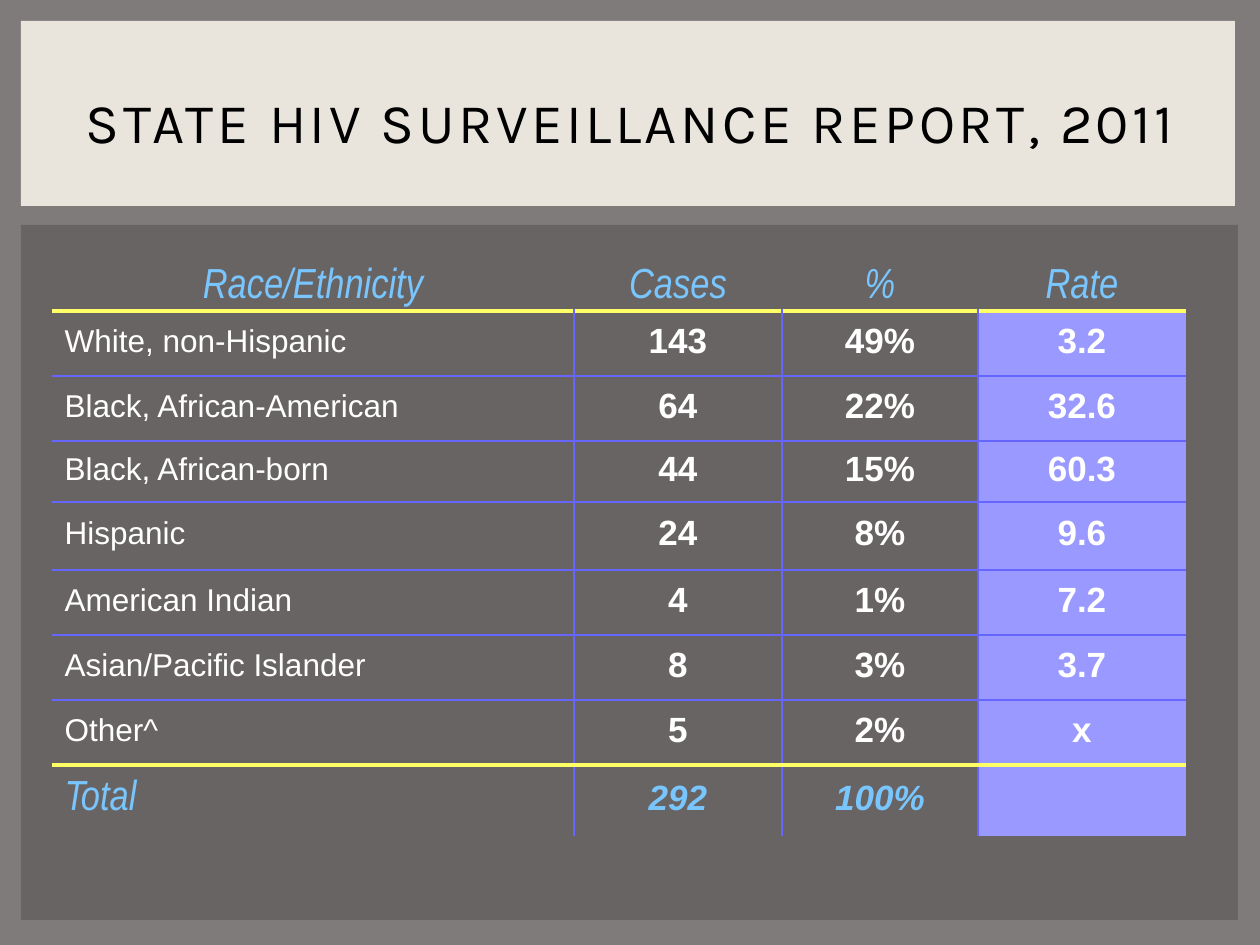
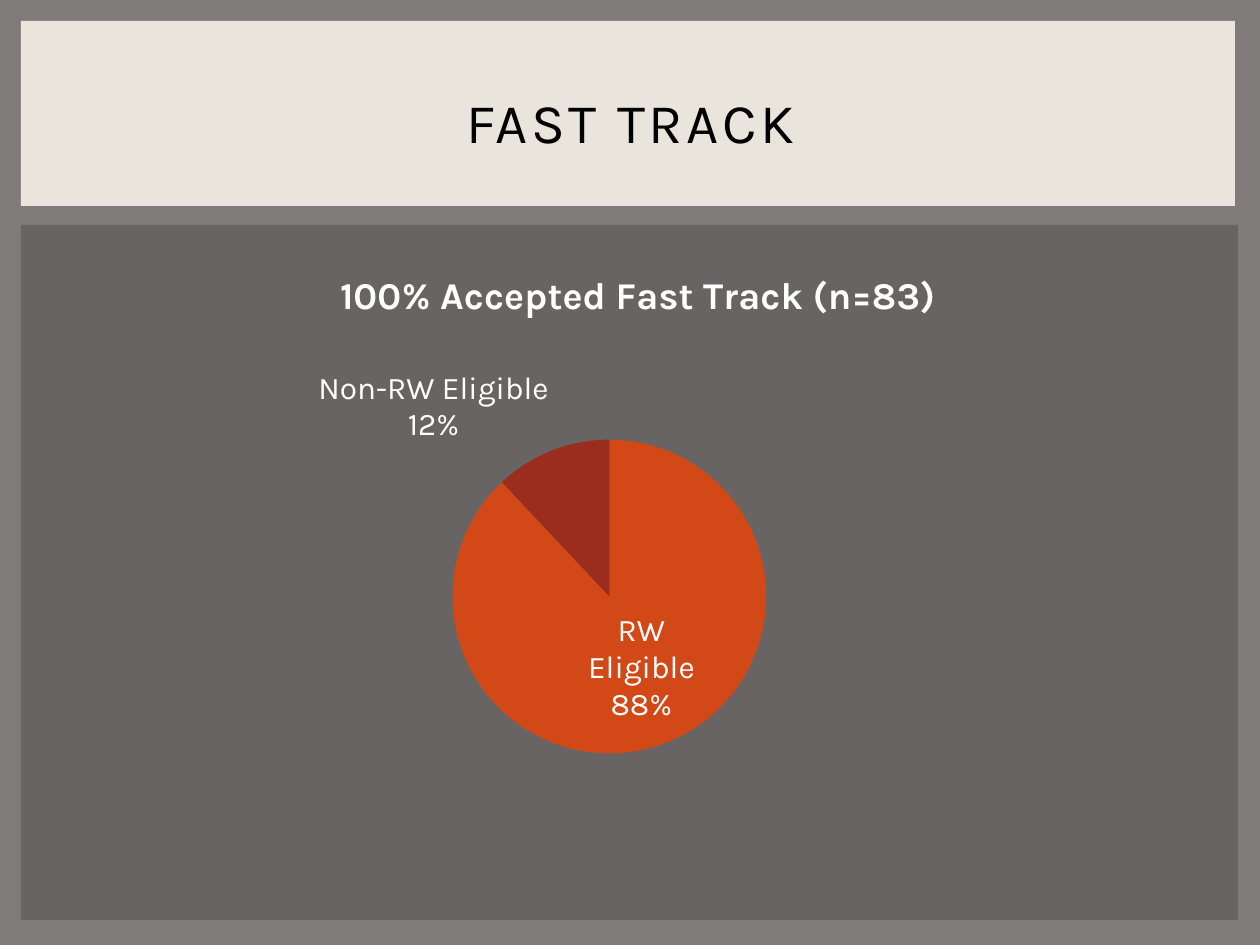
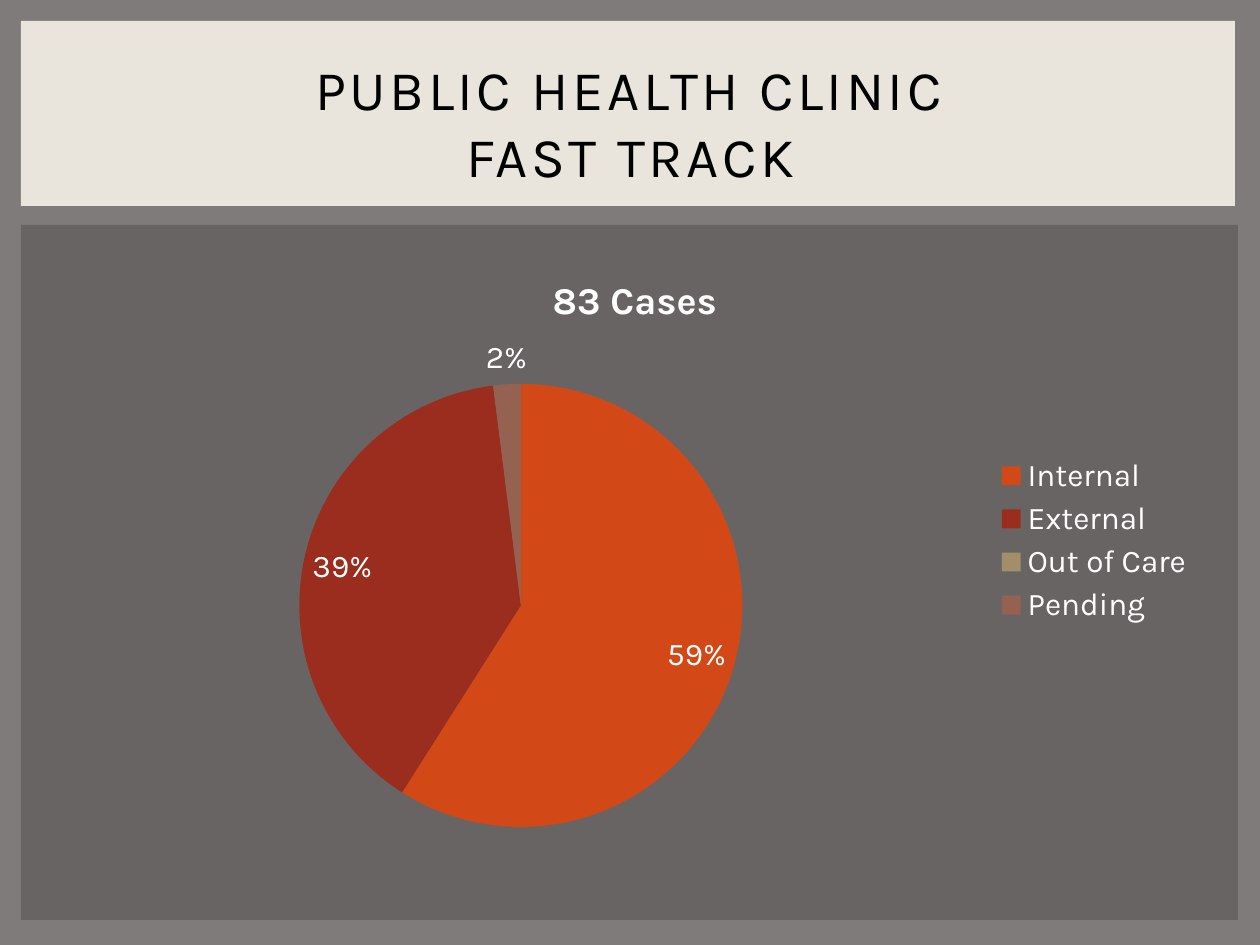
from lxml.etree import SubElement
from pptx import Presentation
from pptx.chart.data import CategoryChartData
from pptx.dml.color import RGBColor
from pptx.enum.chart import XL_CHART_TYPE, XL_LABEL_POSITION, XL_LEGEND_POSITION
from pptx.enum.shapes import MSO_SHAPE
from pptx.enum.text import MSO_ANCHOR, MSO_AUTO_SIZE, PP_ALIGN
from pptx.oxml.ns import qn
from pptx.util import Inches, Pt

PX = Inches(1) / 126
COLORS = {
    "background": "807B7B",
    "panel": "696464",
    "title_band": "E9E5DC",
    "title": "000000",
    "text": "FFFFFF",
    "heading": "79C6FF",
    "rate_fill": "9999FF",
    "grid": "6666FF",
    "rule": "FFFF66",
}
SLICES = ["D34817", "9B2D1F", "A28E6A", "956251"]
BANDS = [((21, 225, 1217, 695), "panel"), ((21, 21, 1214, 185), "title_band")]
TITLE_BOX = (53, 49, 1155, 145)
CHART_TOP, CHART_WIDTH, CHART_HEIGHT = 237, 1158, 607

COLUMN_WIDTHS = [522, 208, 196, 208]
ROW_HEIGHTS = [46, 65, 65, 61, 68, 65, 65, 65, 71]
SURVEILLANCE = [
    ("Race/Ethnicity", "Cases", "%", "Rate"),
    ("White, non-Hispanic", "143", "49%", "3.2"),
    ("Black, African-American", "64", "22%", "32.6"),
    ("Black, African-born", "44", "15%", "60.3"),
    ("Hispanic", "24", "8%", "9.6"),
    ("American Indian", "4", "1%", "7.2"),
    ("Asian/Pacific Islander", "8", "3%", "3.7"),
    ("Other^", "5", "2%", "x"),
    ("Total", "292", "100%", ""),
]


def emu(*lengths):
    return [round(length * PX) for length in lengths]


def rgb(name):
    return RGBColor.from_string(COLORS[name])


def style_font(font, face, size, color, bold=False, italic=False):
    font.name, font.size = face, Pt(size)
    font.color.rgb = rgb(color)
    font.bold, font.italic = bold, italic


def add_titled_slide(prs, title_text):
    slide = prs.slides.add_slide(prs.slide_layouts[5])
    title = slide.shapes.title
    title.left, title.top, title.width, title.height = emu(*TITLE_BOX)
    frame = title.text_frame
    frame.text = title_text
    frame.word_wrap = True
    frame.auto_size = MSO_AUTO_SIZE.NONE
    frame.vertical_anchor = MSO_ANCHOR.MIDDLE
    frame.paragraphs[0].alignment = PP_ALIGN.CENTER
    for run in frame.paragraphs[0].runs:
        style_font(run.font, "Karla", 32, "title")
        run.font._element.set("spc", "200")
    for box, color in BANDS:
        band = slide.shapes.add_shape(MSO_SHAPE.RECTANGLE, *emu(*box))
        band.shadow.inherit = False
        band.fill.solid()
        band.fill.fore_color.rgb = rgb(color)
        band.line.fill.background()
        title._element.addprevious(band._element)
    return slide


def set_borders(cell, sides):
    """Draw the given sides as (colour, points) and hide those set to None."""
    properties = cell._tc.get_or_add_tcPr()
    for side in "LRTB":
        line = SubElement(properties, qn(f"a:ln{side}"))
        if sides[side] is None:
            SubElement(line, qn("a:noFill"))
            continue
        color, points = sides[side]
        line.set("w", str(Pt(points)))
        fill = SubElement(line, qn("a:solidFill"))
        SubElement(fill, qn("a:srgbClr"), val=COLORS[color])


def cell_borders(row, column):
    last_row, last_column = len(SURVEILLANCE) - 1, len(COLUMN_WIDTHS) - 1
    grid, rule = ("grid", 1), ("rule", 2.25)

    def edge_below(index):
        if index in (-1, last_row):
            return None
        return rule if index in (0, last_row - 1) else grid

    return {
        "L": grid if row and column else None,
        "R": grid if row and column < last_column else None,
        "T": edge_below(row - 1),
        "B": edge_below(row),
    }


def cell_style(row, column):
    if row == 0 or (row == len(SURVEILLANCE) - 1 and column == 0):
        return "Arial Narrow", 24, "heading", False, True
    if row == len(SURVEILLANCE) - 1:
        return "Arial", 20, "heading", True, True
    return ("Arial", 20, "text", True) if column else ("Arial", 18, "text")


def fill_cell(cell, text, row, column):
    set_borders(cell, cell_borders(row, column))
    if row and column == len(COLUMN_WIDTHS) - 1:
        cell.fill.solid()
        cell.fill.fore_color.rgb = rgb("rate_fill")
    else:
        cell.fill.background()
    cell.vertical_anchor = MSO_ANCHOR.MIDDLE
    if row == 0:
        cell.margin_top = cell.margin_bottom = 0
    cell.text_frame.text = text
    paragraph = cell.text_frame.paragraphs[0]
    paragraph.alignment = PP_ALIGN.LEFT if row and not column else PP_ALIGN.CENTER
    paragraph.line_spacing = 0.85
    style = cell_style(row, column)
    paragraph.space_after = Pt(style[1] / 4)
    for run in paragraph.runs:
        style_font(run.font, *style)


def add_surveillance_table(slide):
    box = emu(52, 265, sum(COLUMN_WIDTHS), sum(ROW_HEIGHTS))
    table = slide.shapes.add_table(len(ROW_HEIGHTS), len(COLUMN_WIDTHS), *box).table
    table.first_row = table.horz_banding = False
    for column, width in zip(table.columns, emu(*COLUMN_WIDTHS)):
        column.width = width
    for row, height in zip(table.rows, emu(*ROW_HEIGHTS)):
        row.height = height
    for r, record in enumerate(SURVEILLANCE):
        for c, text in enumerate(record):
            fill_cell(table.cell(r, c), text, r, c)


def place_in_chart(element, fractions, inner=False):
    """Give a chart part a manual layout in fractions of the chart's size."""
    layout = element.find(qn("c:layout"))
    if layout is None:
        layout = element.makeelement(qn("c:layout"))
        text = element.find(qn("c:tx"))
        if text is None:
            element.insert(0, layout)
        else:
            text.addnext(layout)
    manual = SubElement(layout, qn("c:manualLayout"))
    if inner:
        SubElement(manual, qn("c:layoutTarget"), val="inner")
    for axis in "xy":
        SubElement(manual, qn(f"c:{axis}Mode"), val="edge")
    for name, fraction in zip("xywh", fractions):
        SubElement(manual, qn(f"c:{name}"), val=f"{fraction:.3f}")


def add_pie(slide, left, title, title_at, shares, circle, with_legend):
    """Add a pie; title_at and circle (left, top, diameter) are slide px."""
    data = CategoryChartData()
    data.categories = list(shares)
    data.add_series("Series 1", list(shares.values()))
    box = emu(left, CHART_TOP, CHART_WIDTH, CHART_HEIGHT)
    chart = slide.shapes.add_chart(XL_CHART_TYPE.PIE, *box, data).chart
    style_font(chart.font, "Karla", 18, "text")

    def fractions(x, y, size=0):
        return ((x - left) / CHART_WIDTH, (y - CHART_TOP) / CHART_HEIGHT,
                size / CHART_WIDTH, size / CHART_HEIGHT)

    chart.has_title = True
    heading = chart.chart_title.text_frame
    heading.text = title
    style_font(heading.paragraphs[0].runs[0].font, "Karla", 21.6, "text", True)
    place_in_chart(chart.chart_title._element, fractions(*title_at)[:2])
    plot_area = chart._chartSpace.chart.plotArea
    place_in_chart(plot_area, fractions(*circle), inner=True)

    chart.has_legend = with_legend
    if with_legend:
        chart.legend.position = XL_LEGEND_POSITION.RIGHT
        chart.legend.include_in_layout = False
        style_font(chart.legend.font, "Karla", 18, "text")

    chart.plots[0].vary_by_categories = True
    series = chart.plots[0].series[0]
    for index, color in enumerate(SLICES[:len(shares)]):
        fill = series.points[index].format.fill
        fill.solid()
        fill.fore_color.rgb = RGBColor.from_string(color)

    labels = series.data_labels
    labels.show_value = False
    labels.show_percentage = True
    labels.show_category_name = not with_legend
    labels.number_format, labels.number_format_is_linked = "0%", False
    labels.position = XL_LABEL_POSITION.BEST_FIT
    style_font(labels.font, "Karla", 18, "text")
    separator = labels._element.makeelement(qn("c:separator"))
    separator.text = "\n"
    labels._element.find(qn("c:showBubbleSize")).addnext(separator)


def main():
    prs = Presentation()
    prs.slide_width, prs.slide_height = emu(1260, 945)
    background = prs.slide_master.background.fill
    background.solid()
    background.fore_color.rgb = rgb("background")

    report = add_titled_slide(prs, "STATE HIV SURVEILLANCE REPORT, 2011")
    add_surveillance_table(report)

    fast_track = add_titled_slide(prs, "FAST TRACK")
    add_pie(fast_track, 53, "100% Accepted Fast Track (n=83)", (333, 263),
            {"RW Eligible": 88, "Non-RW Eligible": 12}, (452, 440, 314), False)

    clinic = add_titled_slide(prs, "PUBLIC HEALTH CLINIC\vFAST TRACK")
    add_pie(clinic, 49, "83 Cases", (546, 268),
            {"Internal": 59, "External": 39, "Out of Care": 0, "Pending": 2},
            (299, 384, 443), True)

    prs.save("out.pptx")


if __name__ == "__main__":
    main()
